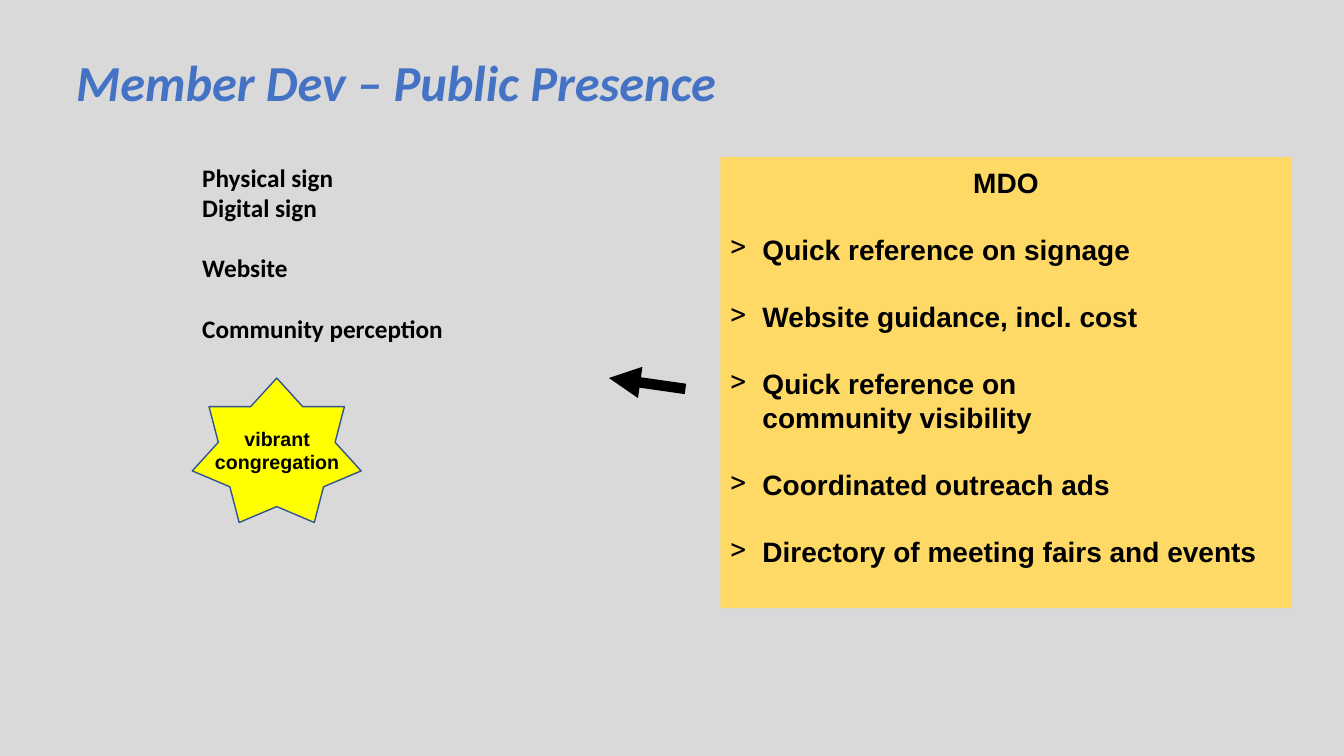
import dataclasses

import pptx
import pptx.dml.color
import pptx.enum.shapes
import pptx.enum.text
import pptx.oxml.ns
import pptx.util
from lxml import etree

WIDTH, HEIGHT = pptx.util.Inches(13.333), pptx.util.Inches(7.5)
COLUMNS, ROWS = 160, 90
SHAPES = pptx.enum.shapes.MSO_SHAPE
CENTER = pptx.enum.text.PP_ALIGN.CENTER

TITLE = "Member Dev – Public Presence"
# A vertical tab is a line break inside a paragraph.
TOPICS = ["Physical sign\vDigital sign", "Website", "Community perception"]
PANEL_HEADING = "MDO"
PANEL_ITEMS = [
    "Quick reference on signage",
    "Website guidance, incl. cost",
    "Quick reference on\vcommunity visibility",
    "Coordinated outreach ads",
    "Directory of meeting fairs and events",
]
GOAL = ["vibrant", "congregation"]


@dataclasses.dataclass(frozen=True)
class Theme:
    background: str = "D9D9D9"
    title: str = "4472C4"
    ink: str = "000000"
    panel: str = "FFD966"
    star: str = "FFFF00"
    star_edge: str = "325491"
    heading_font: str = "Calibri"
    body_font: str = "Arial"
    title_size: int = 36
    topic_size: int = 18
    panel_size: int = 20
    goal_size: int = 14


THEME = Theme()


def color(code):
    return pptx.dml.color.RGBColor.from_string(code)


def point(column, row):
    return round(WIDTH * column / COLUMNS), round(HEIGHT * row / ROWS)


def box(column, row, columns, rows):
    return (*point(column, row), *point(columns, rows))


def write(shape, lines, font, size, ink=THEME.ink, italic=False, align=None, gap=0):
    """Fill a shape with one paragraph per line, `gap` points apart."""
    frame = shape.text_frame
    frame.word_wrap = True
    frame.vertical_anchor = pptx.enum.text.MSO_ANCHOR.TOP
    frame.text = "\n".join(lines)
    for index, paragraph in enumerate(frame.paragraphs):
        paragraph.alignment = align or pptx.enum.text.PP_ALIGN.LEFT
        paragraph.space_before = pptx.util.Pt(gap if index else 0)
        for run in paragraph.runs:
            run.font.name = font
            run.font.size = pptx.util.Pt(size)
            run.font.bold = True
            run.font.italic = italic
            run.font.color.rgb = color(ink)


def add_text(slide, place, lines, font, size, **style):
    write(slide.shapes.add_textbox(*place), lines, font, size, **style)


def add_filled(slide, kind, place, fill, edge=None):
    shape = slide.shapes.add_shape(kind, *place)
    shape.shadow.inherit = False
    shape.fill.solid()
    shape.fill.fore_color.rgb = color(fill)
    if edge:
        shape.line.color.rgb = color(edge)
        shape.line.width = pptx.util.Pt(1)
    else:
        shape.line.fill.background()
    return shape


def set_bullet(paragraph, mark, indent):
    properties = paragraph._p.get_or_add_pPr()
    properties.set("marL", str(indent))
    properties.set("indent", str(-indent))
    etree.SubElement(properties, pptx.oxml.ns.qn("a:buChar"), char=mark)


def add_panel(slide, place):
    panel = add_filled(slide, SHAPES.RECTANGLE, place, THEME.panel)
    write(panel, [PANEL_HEADING, *PANEL_ITEMS], THEME.body_font, THEME.panel_size, gap=24)
    panel.text_frame.margin_top = pptx.util.Inches(0.08)
    heading, *items = panel.text_frame.paragraphs
    heading.alignment = CENTER
    for paragraph in (heading, *items):
        paragraph.line_spacing = pptx.util.Pt(24)
    for item in items:
        set_bullet(item, ">", pptx.util.Inches(0.32))


def add_arrow(slide, start, end, width):
    arrow = slide.shapes.add_connector(
        pptx.enum.shapes.MSO_CONNECTOR.STRAIGHT, *start, *end)
    arrow.line.color.rgb = color(THEME.ink)
    arrow.line.width = pptx.util.Pt(width)
    qualified = pptx.oxml.ns.qn
    etree.SubElement(arrow.line._get_or_add_ln(), qualified("a:tailEnd"), type="triangle")
    etree.SubElement(arrow._element.spPr, qualified("a:effectLst"))


def main():
    presentation = pptx.Presentation()
    presentation.slide_width, presentation.slide_height = WIDTH, HEIGHT
    slide = presentation.slides.add_slide(presentation.slide_layouts[6])
    slide.background.fill.solid()
    slide.background.fill.fore_color.rgb = color(THEME.background)

    add_text(slide, box(7.9, 5.5, 125.5, 8.5), [TITLE], THEME.heading_font,
             THEME.title_size, ink=THEME.title, italic=True)
    add_text(slide, box(22.9, 18.7, 46, 23), TOPICS, THEME.heading_font,
             THEME.topic_size, gap=21.5)
    add_panel(slide, box(85.75, 18.7, 68, 53.7))
    add_arrow(slide, point(81.6, 46.3), point(72.5, 45), 7.5)
    add_filled(slide, SHAPES.STAR_7_POINT, box(22.9, 45, 20.1, 17.2),
               THEME.star, THEME.star_edge)
    add_text(slide, box(23.9, 50.2, 18.2, 6.8), GOAL, THEME.body_font,
             THEME.goal_size, align=CENTER)

    presentation.save("out.pptx")


if __name__ == "__main__":
    main()
